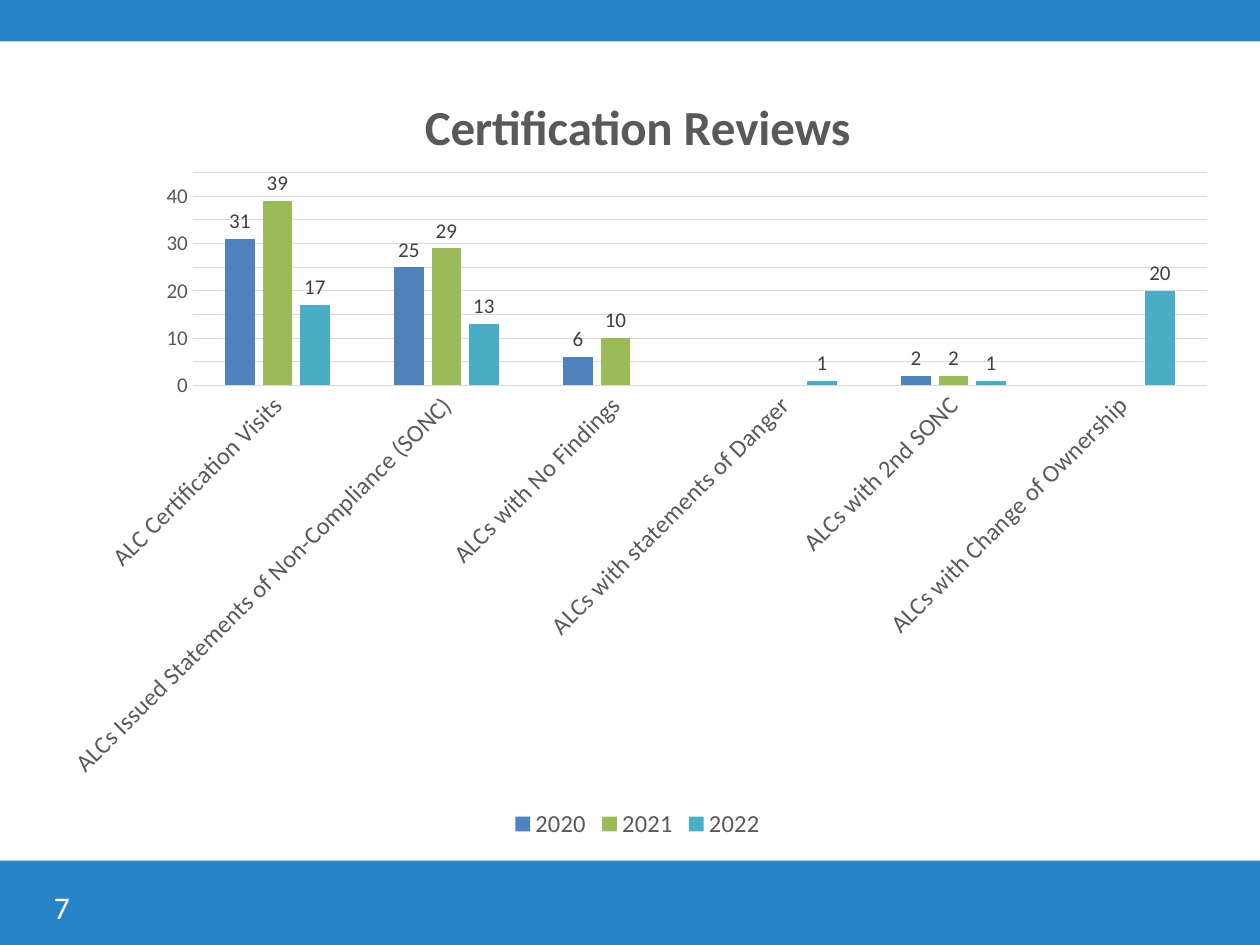
from dataclasses import dataclass
from typing import Any, NamedTuple

from lxml.etree import SubElement as Sub
from pptx import Presentation
from pptx.chart.data import CategoryChartData as Data
from pptx.dml.color import RGBColor as Rgb
from pptx.enum.chart import XL_CHART_TYPE as Kind
from pptx.enum.chart import XL_LABEL_POSITION as Spot
from pptx.enum.chart import XL_LEGEND_POSITION as Side
from pptx.enum.chart import XL_TICK_MARK as Tick
from pptx.enum.shapes import MSO_SHAPE as Form
from pptx.enum.text import MSO_ANCHOR as Anchor
from pptx.oxml.ns import qn
from pptx.util import Inches, Pt


@dataclass(frozen=True)
class Theme:
    font: str = "Calibri"
    band: str = "2784C5"
    white: str = "FFFFFF"
    text: str = "595959"
    value: str = "404040"
    rule: str = "D9D9D9"
    head: int = 28
    page: int = 18
    label: int = 14
    small: int = 12


class Band(NamedTuple):
    top: float
    high: float


class Year(NamedTuple):
    name: str
    color: str
    counts: tuple


class Box(NamedTuple):
    x: float
    y: float
    w: float
    h: float


THEME = Theme()
WIDE, HIGH = 10, 7.5
BANDS = [Band(0, 0.33), Band(6.83, 0.67)]
FRAME = Box(0.35, 0.5, 9.42, 6.2)
PLOT = Box(1.53, 1.37, 8.05, 1.69)
TOPICS = [
    "ALC Certification Visits",
    "ALCs Issued Statements of Non-Compliance (SONC)",
    "ALCs with No Findings",
    "ALCs with statements of Danger",
    "ALCs with 2nd SONC",
    "ALCs with Change of Ownership",
]
YEARS = [
    Year("2020", "4F81BD", (31, 25, 6, None, 2, None)),
    Year("2021", "9BBB59", (39, 29, 10, None, 2, None)),
    Year("2022", "4BACC6", (17, 13, None, 1, 1, 20)),
]


def apply(item: Any, **values: Any) -> None:
    for key, value in values.items():
        setattr(item, key, value)


def style(font: Any, size: int, color: str, bold: bool = False) -> None:
    apply(font, name=THEME.font, size=Pt(size), bold=bold)
    font.color.rgb = Rgb.from_string(color)


def paint(fill: Any, color: str) -> None:
    fill.solid()
    fill.fore_color.rgb = Rgb.from_string(color)


def rule(line: Any) -> None:
    paint(line.fill, THEME.rule)
    line.width = Pt(0.75)


def draw_band(slide: Any, band: Band) -> None:
    shape = slide.shapes.add_shape(
        Form.RECTANGLE, 0, Inches(band.top), Inches(WIDE), Inches(band.high))
    shape.shadow.inherit = False
    paint(shape.fill, THEME.band)
    shape.line.fill.background()


def place_plot(chart: Any) -> None:
    """Fix the inner plot area as fractions of the chart frame."""
    area = chart._chartSpace.chart.plotArea
    layout = area.find(qn("c:layout"))
    if layout is None:
        layout = Sub(area, qn("c:layout"))
        area.insert(0, layout)
    manual = Sub(layout, qn("c:manualLayout"))
    parts = {
        "layoutTarget": "inner", "xMode": "edge", "yMode": "edge",
        "x": round((PLOT.x - FRAME.x) / FRAME.w, 4),
        "y": round((PLOT.y - FRAME.y) / FRAME.h, 4),
        "w": round(PLOT.w / FRAME.w, 4),
        "h": round(PLOT.h / FRAME.h, 4),
    }
    for tag, value in parts.items():
        Sub(manual, qn(f"c:{tag}")).set("val", str(value))


def style_axes(chart: Any) -> None:
    topics, counts = chart.category_axis, chart.value_axis
    for axis, size in ((topics, THEME.label), (counts, THEME.small)):
        apply(axis, major_tick_mark=Tick.NONE, minor_tick_mark=Tick.NONE)
        style(axis.tick_labels.font, size, THEME.text)
    rule(topics.format.line)
    slant = topics._element.find(qn("c:txPr")).find(qn("a:bodyPr"))
    slant.set("rot", "-2700000")
    apply(counts, minimum_scale=0, maximum_scale=45, major_unit=5)
    counts.format.line.fill.background()
    rule(counts.major_gridlines.format.line)


def style_bars(chart: Any) -> None:
    plot = chart.plots[0]
    apply(plot, gap_width=219, overlap=-27, vary_by_categories=False)
    for bars, year in zip(plot.series, YEARS):
        paint(bars.format.fill, year.color)
        labels = bars.data_labels
        apply(labels, show_value=True, position=Spot.OUTSIDE_END)
        style(labels.font, THEME.small, THEME.value)


def draw_chart(slide: Any) -> None:
    data = Data()
    data.categories = TOPICS
    for year in YEARS:
        data.add_series(year.name, year.counts)
    chart = slide.shapes.add_chart(
        Kind.COLUMN_CLUSTERED, *map(Inches, FRAME), data).chart
    style(chart.font, 10, "000000")
    apply(chart, has_title=True, has_legend=True)
    head = chart.chart_title.text_frame.paragraphs[0].add_run()
    head.text = "Certification Reviews"
    style(head.font, THEME.head, THEME.text, bold=True)
    apply(chart.legend, position=Side.BOTTOM, include_in_layout=False)
    style(chart.legend.font, THEME.label, THEME.text)
    style_axes(chart)
    style_bars(chart)
    place_plot(chart)


def draw_page(slide: Any, number: str) -> None:
    box = slide.shapes.add_textbox(*map(Inches, (0.33, 7, 2.33, 0.4)))
    frame = box.text_frame
    apply(frame, word_wrap=True, vertical_anchor=Anchor.MIDDLE)
    run = frame.paragraphs[0].add_run()
    run.text = number
    style(run.font, THEME.page, THEME.white)


def main() -> None:
    deck = Presentation()
    apply(deck, slide_width=Inches(WIDE), slide_height=Inches(HIGH))
    slide = deck.slides.add_slide(deck.slide_layouts[6])
    paint(slide.background.fill, THEME.white)
    for band in BANDS:
        draw_band(slide, band)
    draw_chart(slide)
    draw_page(slide, "7")
    deck.save("out.pptx")


if __name__ == "__main__":
    main()
